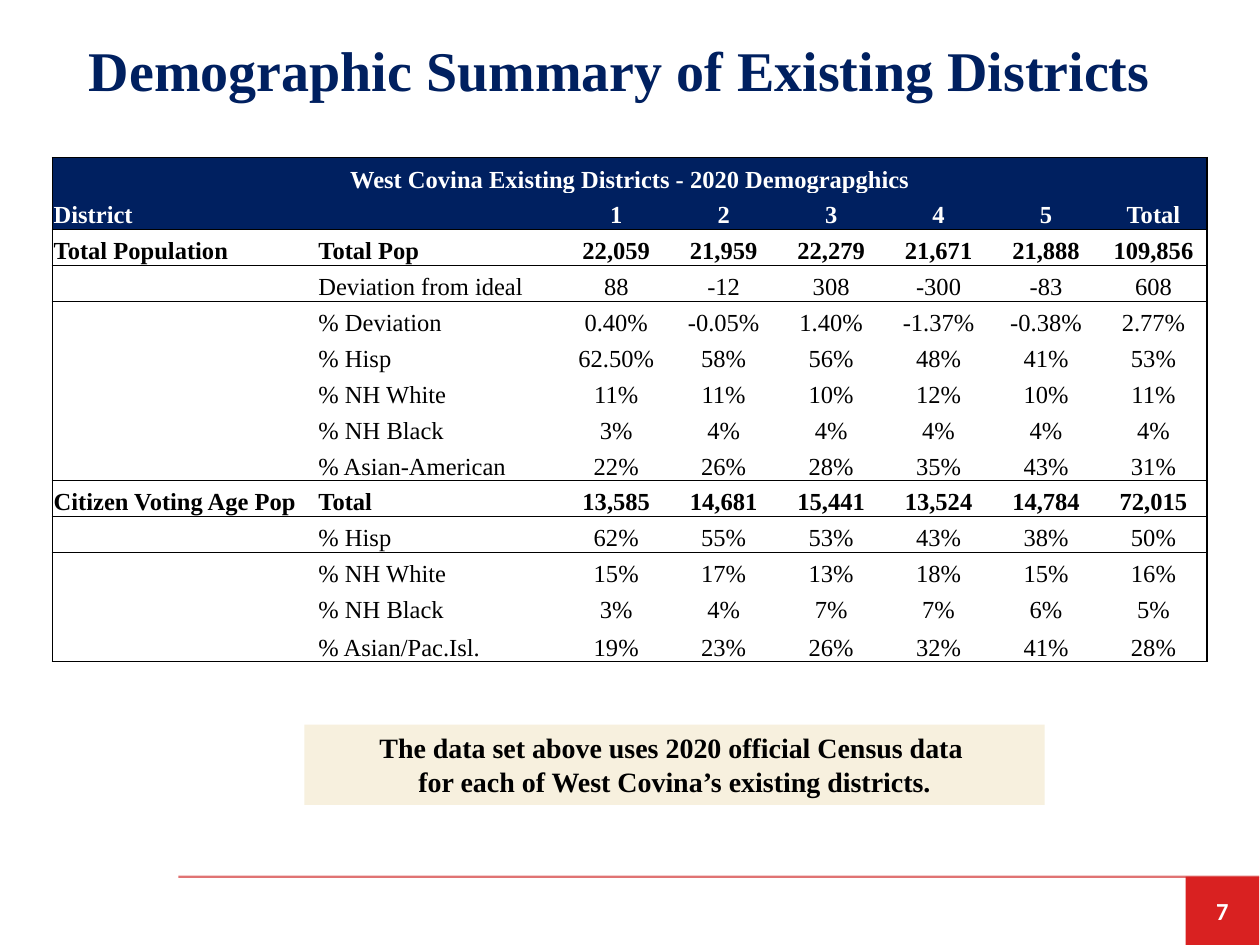
from lxml.etree import SubElement
from pptx import Presentation
from pptx.dml.color import RGBColor
from pptx.enum.shapes import MSO_CONNECTOR, MSO_SHAPE
from pptx.enum.text import MSO_ANCHOR, PP_ALIGN
from pptx.oxml.ns import qn
from pptx.util import Pt

COLORS = {"navy": "002060", "white": "FFFFFF", "black": "000000",
          "cream": "F7F0DE", "red": "D92121", "rule": "C80000"}
SERIF = "Times New Roman"
NO_GRID_STYLE = "{2D5ABB26-0587-4C30-8999-92F81FD0307C}"
DISTRICT_WIDTH = 61.4
COLUMN_WIDTHS = [61.4, 89.9, 61.4, 78.8] + [DISTRICT_WIDTH] * 6
ROW_HEIGHT, LAST_ROW_HEIGHT = 20.5, 21.5
TABLE_TITLE = "West Covina Existing Districts - 2020 Demograpghics"
ROWS = [
    ("District", "", "1 2 3 4 5 Total"),
    ("Total Population", "Total Pop", "22,059 21,959 22,279 21,671 21,888 109,856"),
    ("", "Deviation from ideal", "88 -12 308 -300 -83 608"),
    ("", "% Deviation", "0.40% -0.05% 1.40% -1.37% -0.38% 2.77%"),
    ("", "% Hisp", "62.50% 58% 56% 48% 41% 53%"),
    ("", "% NH White", "11% 11% 10% 12% 10% 11%"),
    ("", "% NH Black", "3% 4% 4% 4% 4% 4%"),
    ("", "% Asian-American", "22% 26% 28% 35% 43% 31%"),
    ("Citizen Voting Age Pop", "Total", "13,585 14,681 15,441 13,524 14,784 72,015"),
    ("", "% Hisp", "62% 55% 53% 43% 38% 50%"),
    ("", "% NH White", "15% 17% 13% 18% 15% 16%"),
    ("", "% NH Black", "3% 4% 7% 7% 6% 5%"),
    ("", "% Asian/Pac.Isl.", "19% 23% 26% 32% 41% 28%"),
]
HEADER_ROWS = (0, 1)
SECTION_ROWS = (2, 9)
UNMERGED_LABEL_ROWS = (1, 5, 9, 10)
RULES_BELOW = {1: 0.5, 2: 0.5, 8: 0.5, 9: 0.5, 13: 1}


def color(key):
    """Return a palette colour."""
    return RGBColor.from_string(COLORS[key])


def add_text(paragraph, text, size, ink, bold=True, align=PP_ALIGN.CENTER, font=SERIF):
    """Add one styled run to a paragraph."""
    paragraph.alignment = align
    run = paragraph.add_run()
    run.text = text
    run.font.name = font
    run.font.size = Pt(size)
    run.font.bold = bold
    run.font.color.rgb = color(ink)


def add_panel(slide, left, top, width, height, fill):
    """Add a plain filled rectangle and return its text frame."""
    panel = slide.shapes.add_shape(MSO_SHAPE.RECTANGLE, Pt(left), Pt(top), Pt(width), Pt(height))
    panel.shadow.inherit = False
    panel.fill.solid()
    panel.fill.fore_color.rgb = color(fill)
    panel.line.fill.background()
    return panel.text_frame


def add_title(slide, text):
    """Add the slide heading."""
    heading = slide.shapes.add_textbox(Pt(0.7), Pt(0), Pt(707), Pt(78.5)).text_frame
    heading.word_wrap = True
    heading.vertical_anchor = MSO_ANCHOR.MIDDLE
    add_text(heading.paragraphs[0], text, 32, "navy")


def add_footer(slide, number):
    """Add the translucent footer rule and the page number block."""
    rule = slide.shapes.add_connector(MSO_CONNECTOR.STRAIGHT, Pt(102), Pt(501), Pt(719.5), Pt(501))
    rule.line.width = Pt(1.25)
    rule.line.color.rgb = color("rule")
    properties = rule._element.spPr
    SubElement(next(properties.iter(qn("a:srgbClr"))), qn("a:alpha"), val="55000")
    SubElement(properties, qn("a:effectLst"))
    page = add_panel(slide, 677.5, 501, 42, 39, "red")
    page.vertical_anchor = MSO_ANCHOR.MIDDLE
    add_text(page.paragraphs[0], number, 14, "white", font="Calibri")


def add_note(slide, lines):
    """Add the centred source note."""
    note = add_panel(slide, 174, 414, 423, 46, "cream")
    note.word_wrap = True
    note.vertical_anchor = MSO_ANCHOR.TOP
    for index, line in enumerate(lines):
        paragraph = note.paragraphs[0] if index == 0 else note.add_paragraph()
        add_text(paragraph, line, 16, "black")


def set_border(cell, side, width):
    """Draw one black border of a cell."""
    edge = SubElement(cell._tc.get_or_add_tcPr(), qn(f"a:ln{side}"), w=str(Pt(width)))
    SubElement(SubElement(edge, qn("a:solidFill")), qn("a:srgbClr"), val=COLORS["black"])


def format_cell(cell, row, column):
    """Set the margins, borders, fill and empty-text size of a cell."""
    cell.margin_left = cell.margin_right = cell.margin_top = Pt(0.7)
    cell.margin_bottom = Pt(0)
    cell.vertical_anchor = MSO_ANCHOR.BOTTOM
    borders = {
        "L": 1 if column == 0 else 0,
        "R": 1 if column == len(COLUMN_WIDTHS) - 1 or row == 0 and column == 0 else 0,
        "T": 1 if row == 0 else RULES_BELOW.get(row - 1, 0),
        "B": RULES_BELOW.get(row, 0),
    }
    for side, width in borders.items():
        if width:
            set_border(cell, side, width)
    if row in HEADER_ROWS:
        cell.fill.solid()
        cell.fill.fore_color.rgb = color("navy")
    else:
        cell.fill.background()
    SubElement(cell.text_frame.paragraphs[0]._p, qn("a:endParaRPr"), sz="1400")


def fill_row(table, row, entries):
    """Write the texts of one table row by column."""
    for column, text in entries.items():
        if text:
            centred = column >= 4 or row == 0
            add_text(table.cell(row, column).text_frame.paragraphs[0], text, 14,
                     "white" if row in HEADER_ROWS else "black",
                     bold=row in HEADER_ROWS + SECTION_ROWS,
                     align=PP_ALIGN.CENTER if centred else PP_ALIGN.LEFT)


def add_demographics(slide):
    """Add the table of district demographics."""
    row_count, column_count = len(ROWS) + 1, len(COLUMN_WIDTHS)
    frame = slide.shapes.add_table(row_count, column_count, Pt(30), Pt(90),
                                   Pt(sum(COLUMN_WIDTHS)), Pt(288))
    table = frame.table
    table.first_row = table.horz_banding = False
    table._tbl.tblPr.find(qn("a:tableStyleId")).text = NO_GRID_STYLE
    for column, width in zip(table.columns, COLUMN_WIDTHS):
        column.width = Pt(width)
    for row, table_row in enumerate(table.rows):
        table_row.height = Pt(LAST_ROW_HEIGHT if row == row_count - 1 else ROW_HEIGHT)
        for column in range(column_count):
            format_cell(table.cell(row, column), row, column)
    table.cell(0, 0).merge(table.cell(0, column_count - 1))
    fill_row(table, 0, {0: TABLE_TITLE})
    for row, (section, label, values) in enumerate(ROWS, start=1):
        if row in SECTION_ROWS:
            table.cell(row, 0).merge(table.cell(row, 1))
        if row not in UNMERGED_LABEL_ROWS:
            table.cell(row, 2).merge(table.cell(row, 3))
        fill_row(table, row, {0: section, 2: label, **dict(enumerate(values.split(), start=4))})


def main():
    """Build the demographic summary slide."""
    deck = Presentation()
    deck.slide_width, deck.slide_height = Pt(720), Pt(540)
    slide = deck.slides.add_slide(deck.slide_layouts[6])
    add_footer(slide, "7")
    add_title(slide, "Demographic Summary of Existing Districts")
    add_note(slide, ["The data set above uses 2020 official Census data ",
                     "for each of West Covina’s existing districts."])
    add_demographics(slide)
    deck.save("out.pptx")


if __name__ == "__main__":
    main()
